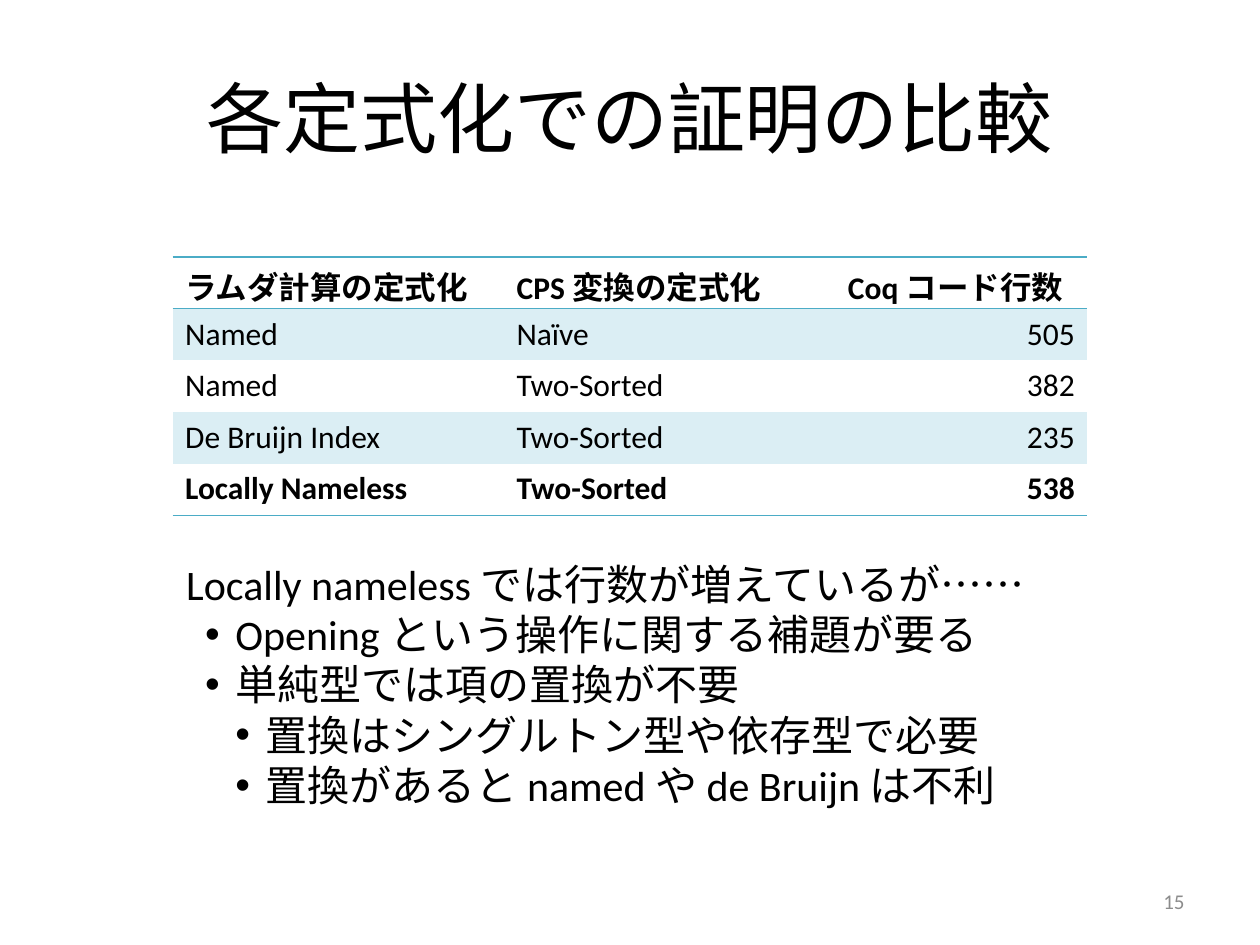
from lxml import etree
from pptx import Presentation
from pptx import util as u
from pptx.dml.color import RGBColor
from pptx.enum import text
from pptx.oxml import ns

COLORS = {"ink": "000000", "number": "8C8C8C", "rule": "4BACC6", "band": "DBEEF4"}
PLAIN_TABLE_STYLE = "{2D5ABB26-0587-4C30-8999-92F81FD0307C}"
LEFT, RIGHT, CENTER = text.PP_ALIGN.LEFT, text.PP_ALIGN.RIGHT, text.PP_ALIGN.CENTER

COLUMN_WIDTHS = [2.63, 2.63, 2]
ROW_HEIGHT = 0.41
ROWS = [
    ("ラムダ計算の定式化", "CPS 変換の定式化", "Coq コード行数"),
    ("Named", "Naïve", "505"),
    ("Named", "Two-Sorted", "382"),
    ("De Bruijn Index", "Two-Sorted", "235"),
    ("Locally Nameless", "Two-Sorted", "538"),
]
REMARKS = [
    (0, "Locally nameless では行数が増えているが……"),
    (1, "Opening という操作に関する補題が要る"),
    (1, "単純型では項の置換が不要"),
    (2, "置換はシングルトン型や依存型で必要"),
    (2, "置換があると named や de Bruijn は不利"),
]
INDENTS = {1: 0.39, 2: 0.63}
HANGING = 0.24


def write(paragraph, words, size, color="ink", align=LEFT, bold=False):
    paragraph.alignment = align
    run = paragraph.add_run()
    run.text = words
    for name, value in {"name": "Calibri", "size": u.Pt(size), "bold": bold}.items():
        setattr(run.font, name, value)
    run.font.color.rgb = RGBColor.from_string(COLORS[color])


def add_text_frame(slide, box, anchor):
    frame = slide.shapes.add_textbox(*map(u.Inches, box)).text_frame
    frame.word_wrap = True
    frame.vertical_anchor = anchor
    return frame


def add_line_of_text(slide, box, words, **style):
    frame = add_text_frame(slide, box, text.MSO_ANCHOR.MIDDLE)
    write(frame.paragraphs[0], words, **style)


def add_bullet(paragraph, indent):
    properties = paragraph._p.get_or_add_pPr()
    properties.set("marL", str(u.Inches(indent)))
    properties.set("indent", str(-u.Inches(HANGING)))
    etree.SubElement(properties, ns.qn("a:buFont")).set("typeface", "Arial")
    etree.SubElement(properties, ns.qn("a:buChar")).set("char", "•")


def add_remarks(slide, box):
    frame = add_text_frame(slide, box, text.MSO_ANCHOR.TOP)
    for index, (level, words) in enumerate(REMARKS):
        paragraph = frame.add_paragraph() if index else frame.paragraphs[0]
        write(paragraph, words, 24)
        if level:
            add_bullet(paragraph, INDENTS[level])


def add_rules(cell, tags):
    """Draw the named cell borders; they must precede the fill in the XML."""
    properties = cell._tc.get_or_add_tcPr()
    for position, tag in enumerate(tags):
        line = etree.Element(ns.qn(tag), w=str(u.Pt(1)))
        fill = etree.SubElement(line, ns.qn("a:solidFill"))
        etree.SubElement(fill, ns.qn("a:srgbClr")).set("val", COLORS["rule"])
        properties.insert(position, line)


def add_comparison_table(slide, left, top):
    last = len(ROWS) - 1
    frame = slide.shapes.add_table(
        len(ROWS), len(COLUMN_WIDTHS), u.Inches(left), u.Inches(top),
        u.Inches(sum(COLUMN_WIDTHS)), u.Inches(ROW_HEIGHT * len(ROWS)))
    table = frame.table
    table._tbl.tblPr.find(ns.qn("a:tableStyleId")).text = PLAIN_TABLE_STYLE
    for column, width in zip(table.columns, COLUMN_WIDTHS):
        column.width = u.Inches(width)
    rules = {0: ["a:lnT", "a:lnB"], last: ["a:lnB"]}
    for r, values in enumerate(ROWS):
        table.rows[r].height = u.Inches(ROW_HEIGHT)
        for c, value in enumerate(values):
            cell = table.cell(r, c)
            align = RIGHT if r and c == 2 else LEFT
            write(cell.text_frame.paragraphs[0], value, 18, align=align, bold=r in (0, last))
            if r % 2:
                cell.fill.solid()
                cell.fill.fore_color.rgb = RGBColor.from_string(COLORS["band"])
            else:
                cell.fill.background()
            add_rules(cell, rules.get(r, []))


def main():
    presentation = Presentation()
    presentation.slide_width, presentation.slide_height = u.Inches(10), u.Inches(7.5)
    slide = presentation.slides.add_slide(presentation.slide_layouts[6])
    add_line_of_text(slide, (0.5, 0.3, 9, 1.25), "各定式化での証明の比較", size=44, align=CENTER)
    add_comparison_table(slide, 1.37, 2.04)
    add_line_of_text(slide, (7.17, 6.95, 2.33, 0.4), "15", size=12, color="number", align=RIGHT)
    add_remarks(slide, (1.38, 4.38, 7.24, 2.12))
    presentation.save("out.pptx")


if __name__ == "__main__":
    main()
